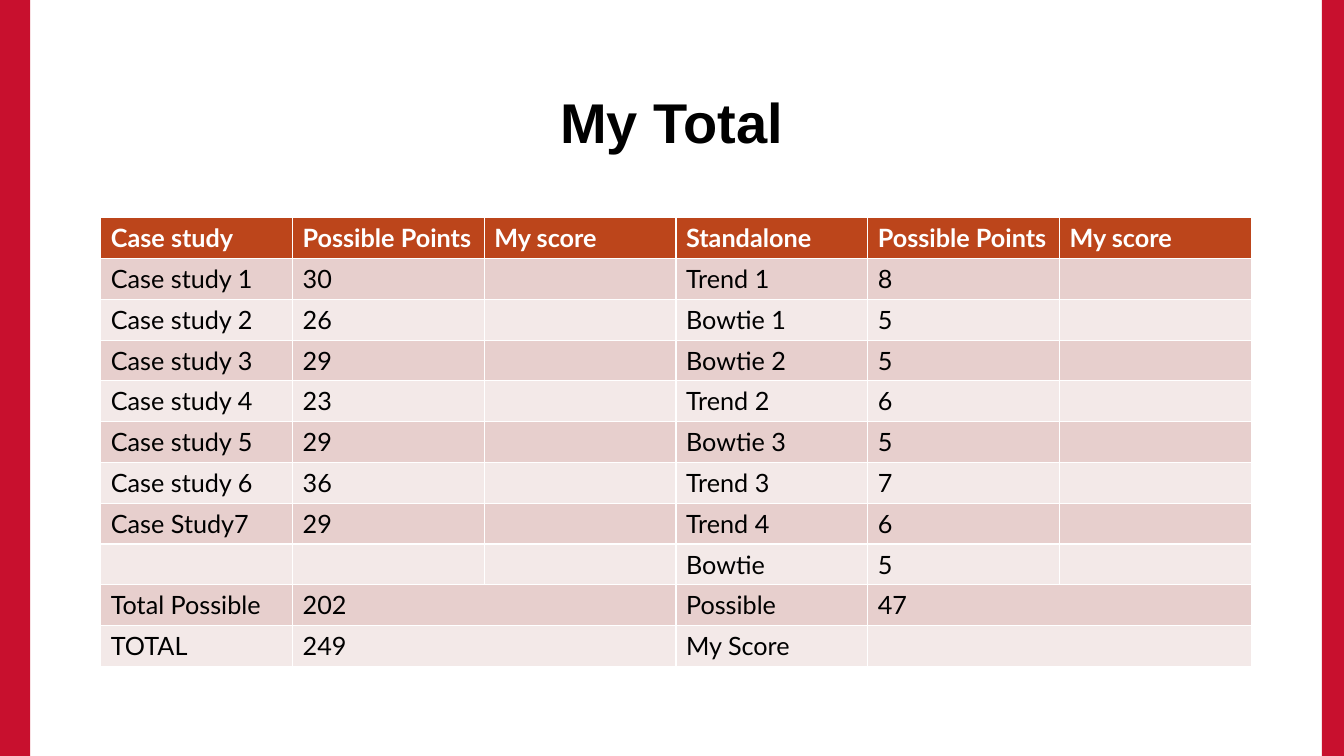
"""Build the "My Total" score sheet slide."""
from pptx import Presentation
from pptx.dml.color import RGBColor
from pptx.enum import shapes, text
from pptx.util import Inches, Pt

TITLE = "My Total"
HEADINGS = ["Case study", "Possible Points", "My score",
            "Standalone", "Possible Points", "My score"]
SCORES = [
    ("Case study 1", "30", "", "Trend 1", "8", ""),
    ("Case study 2", "26", "", "Bowtie 1", "5", ""),
    ("Case study 3", "29", "", "Bowtie 2", "5", ""),
    ("Case study 4", "23", "", "Trend 2", "6", ""),
    ("Case study 5", "29", "", "Bowtie 3", "5", ""),
    ("Case study 6", "36", "", "Trend 3", "7", ""),
    ("Case Study7", "29", "", "Trend 4", "6", ""),
    ("", "", "", "Bowtie", "5", ""),
]
TOTALS = [
    ("Total Possible", "202", "", "Possible", "47", ""),
    ("TOTAL", "249", "", "My Score", "", ""),
]
SIDE_BARS = [(0, 0.3), (13.11, 0.22)]
BAR_RED, HEADING_FILL = "C8102E", "BC451B"
BAND_FILLS = ["F3E9E8", "E7CFCD"]
WHITE, BLACK = "FFFFFF", "000000"
SLIDE_WIDTH, SLIDE_HEIGHT = 13.33, 7.5
TABLE_LEFT, TABLE_TOP, TABLE_WIDTH, ROW_HEIGHT = 1, 2.16, 11.41, 0.405


def paint(fill, color):
    fill.solid()
    fill.fore_color.rgb = RGBColor.from_string(color)


def style(paragraph, name, size, color, bold):
    font = paragraph.font
    font.name, font.size, font.bold = name, Pt(size), bold
    font.color.rgb = RGBColor.from_string(color)


def add_side_bars(slide):
    for left, width in SIDE_BARS:
        bar = slide.shapes.add_shape(shapes.MSO_SHAPE.RECTANGLE, Inches(left), 0,
                                     Inches(width), Inches(SLIDE_HEIGHT))
        paint(bar.fill, BAR_RED)
        bar.line.fill.background()
        bar.shadow.inherit = False


def add_title(slide):
    frame = slide.shapes.add_textbox(Inches(1), Inches(0.67),
                                     Inches(11.32), Inches(1.06)).text_frame
    frame.word_wrap = True
    frame.vertical_anchor = text.MSO_ANCHOR.MIDDLE
    heading = frame.paragraphs[0]
    heading.text = TITLE
    heading.alignment = text.PP_ALIGN.CENTER
    style(heading, "Arial", 40, BLACK, True)


def add_scores(slide):
    rows = [HEADINGS, *SCORES, *TOTALS]
    table = slide.shapes.add_table(
        len(rows), len(HEADINGS), Inches(TABLE_LEFT), Inches(TABLE_TOP),
        Inches(TABLE_WIDTH), Inches(ROW_HEIGHT * len(rows))).table
    for row, entries in enumerate(rows):
        is_heading = row == 0
        for column, entry in enumerate(entries):
            cell = table.cell(row, column)
            cell.text = entry
            paint(cell.fill, HEADING_FILL if is_heading else BAND_FILLS[row % 2])
            style(cell.text_frame.paragraphs[0], "Lato", 18,
                  WHITE if is_heading else BLACK, is_heading)
    for row in range(len(rows) - len(TOTALS), len(rows)):
        for column in (1, 4):
            table.cell(row, column).merge(table.cell(row, column + 1))


def main():
    deck = Presentation()
    deck.slide_width, deck.slide_height = Inches(SLIDE_WIDTH), Inches(SLIDE_HEIGHT)
    slide = deck.slides.add_slide(deck.slide_layouts[6])
    add_side_bars(slide)
    add_title(slide)
    add_scores(slide)
    deck.save("out.pptx")


if __name__ == "__main__":
    main()
